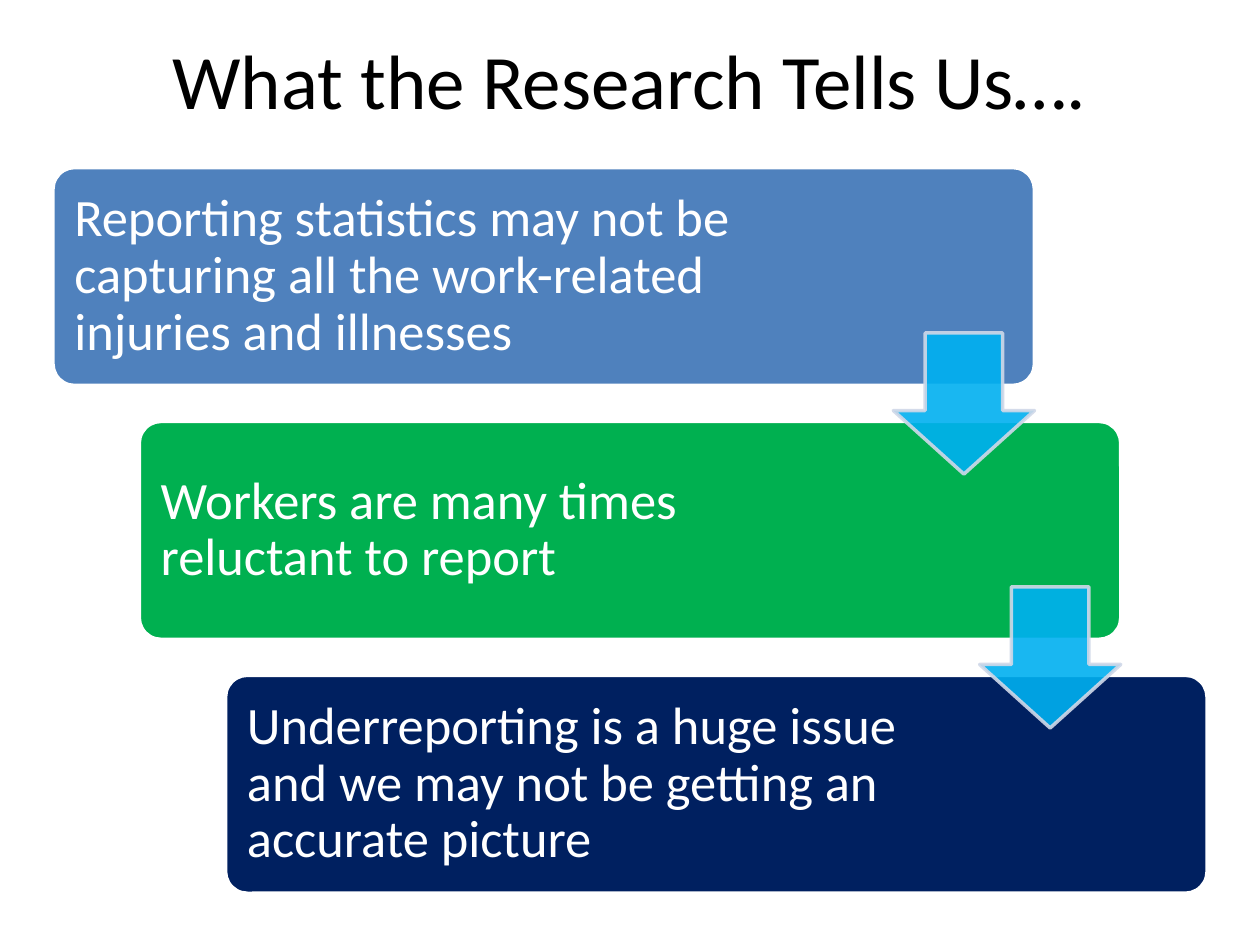
import pptx
import pptx.util
import pptx.dml.color
import pptx.enum.shapes
import pptx.enum.text
import pptx.oxml.ns
import lxml.etree

Inches, Pt = pptx.util.Inches, pptx.util.Pt
RGB = pptx.dml.color.RGBColor
SHAPE = pptx.enum.shapes.MSO_SHAPE
ALIGN = pptx.enum.text.PP_ALIGN
MIDDLE = pptx.enum.text.MSO_ANCHOR.MIDDLE

BLACK = RGB(0x00, 0x00, 0x00)
WHITE = RGB(0xFF, 0xFF, 0xFF)
BLUE = RGB(0x4F, 0x81, 0xBD)
GREEN = RGB(0x00, 0xB0, 0x50)
NAVY = RGB(0x00, 0x20, 0x60)
CYAN = RGB(0x00, 0xB0, 0xF0)
PALE = RGB(0xD0, 0xD8, 0xE8)
FONT = "Calibri"

# Step colour, text width and wording
STEPS = [
    (BLUE, 5.93, "Reporting statistics may not be capturing all the "
                 "work-related injuries and illnesses"),
    (GREEN, 5.88, "Workers are many times reluctant to report"),
    (NAVY, 5.88, "Underreporting is a huge issue and we may not be "
                 "getting an accurate picture"),
]
CARD_W, CARD_H = 7.79, 1.73
PAD = 0.05
ARROW = 1.12


def style(para, size, color):
    para.font.name = FONT
    para.font.size = Pt(size)
    para.font.color.rgb = color


def fade(color_parent, share):
    """Set the opacity of a solid fill, in percent."""
    tag = pptx.oxml.ns.qn("a:srgbClr")
    alpha = pptx.oxml.ns.qn("a:alpha")
    for color in color_parent.iter(tag):
        lxml.etree.SubElement(color, alpha, val=str(share * 1000))


def add_block(slide, kind, box, fill, line):
    shape = slide.shapes.add_shape(kind, *map(Inches, box))
    shape.shadow.inherit = False
    shape.fill.solid()
    shape.fill.fore_color.rgb = fill
    shape.line.color.rgb = line
    shape.line.width = Pt(2)
    return shape


def add_title(slide, box, text):
    title = slide.shapes.title
    title.left, title.top, title.width, title.height = map(Inches, box)
    title.text_frame.text = text
    title.text_frame.vertical_anchor = MIDDLE
    para = title.text_frame.paragraphs[0]
    para.alignment = ALIGN.CENTER
    style(para, 44, BLACK)


def add_card(slide, left, top, fill, width, text):
    card = add_block(slide, SHAPE.ROUNDED_RECTANGLE,
                     (left, top, CARD_W, CARD_H), fill, WHITE)
    card.adjustments[0] = 0.1

    # Wording stays clear of the arrow side
    label = slide.shapes.add_textbox(
        Inches(left + PAD), Inches(top + PAD),
        Inches(width), Inches(CARD_H - 2 * PAD))
    frame = label.text_frame
    frame.word_wrap = True
    frame.vertical_anchor = MIDDLE
    frame.margin_left = frame.margin_right = Inches(0.12)
    frame.margin_top = frame.margin_bottom = Inches(0.12)
    para = frame.paragraphs[0]
    para.text = text
    para.line_spacing = 0.9
    style(para, 30, WHITE)


def add_arrow(slide, left, top):
    arrow = add_block(slide, SHAPE.DOWN_ARROW,
                      (left, top, ARROW, ARROW), CYAN, PALE)
    arrow.adjustments[0] = 0.55
    arrow.adjustments[1] = 0.45
    fade(arrow.element.spPr, 90)


def add_stairs(slide, box):
    """Spread the cards evenly from the top left to the bottom right."""
    left, top, width, height = box
    gaps = len(STEPS) - 1
    dx = (width - CARD_W) / gaps
    dy = (height - CARD_H) / gaps
    spots = [(left + i * dx, top + i * dy) for i in range(len(STEPS))]
    for (x, y), step in zip(spots, STEPS):
        add_card(slide, x, y, *step)
    # Arrows straddle the gap below each card but the last
    for x, y in spots[:-1]:
        add_arrow(slide, x + CARD_W - ARROW, y + (CARD_H + dy - ARROW) / 2)


def main():
    deck = pptx.Presentation()
    deck.slide_width, deck.slide_height = Inches(10), Inches(7.5)
    slide = deck.slides.add_slide(deck.slide_layouts.get_by_name("Title Only"))
    add_title(slide, (0.5, 0, 9, 1.25), "What the Research Tells Us….")
    add_stairs(slide, (0.42, 1.33, 9.16, 5.76))
    deck.save("out.pptx")


if __name__ == "__main__":
    main()
